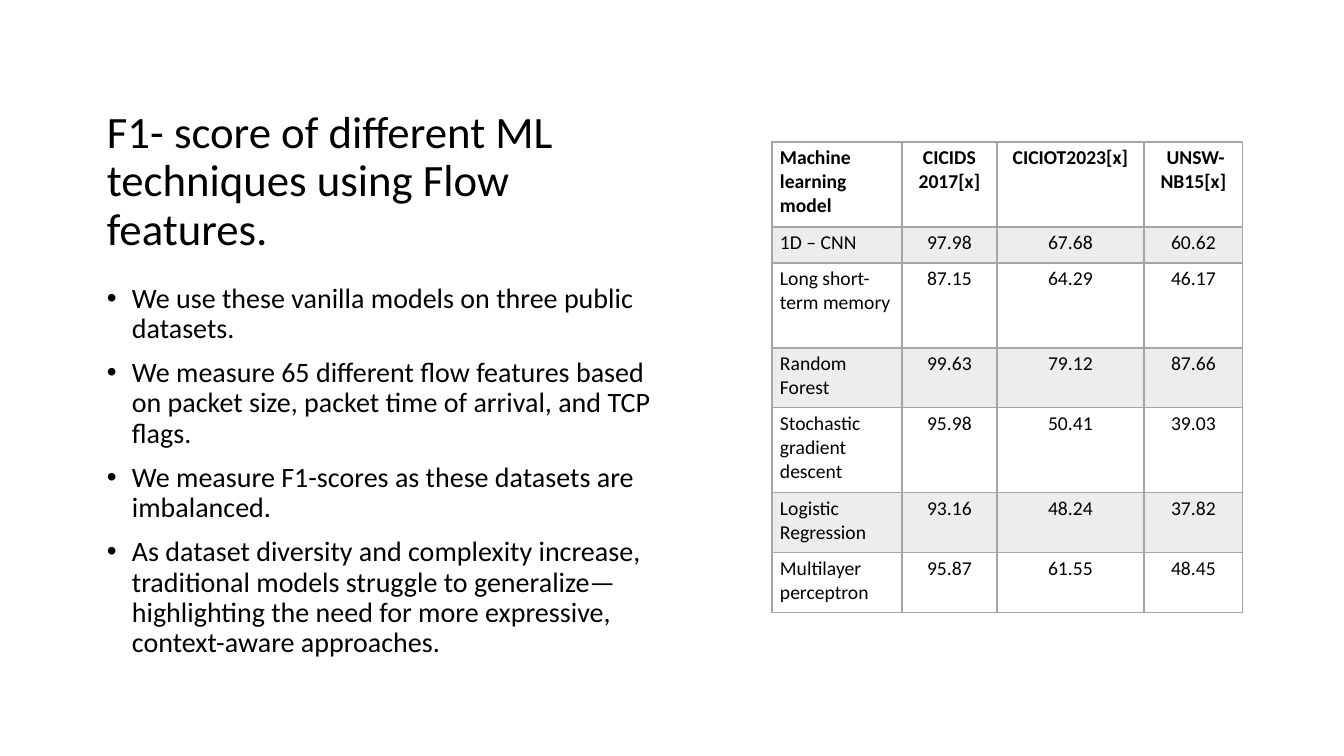
from dataclasses import dataclass

from lxml.etree import SubElement
from pptx import Presentation
from pptx.dml.color import RGBColor
from pptx.enum.text import MSO_ANCHOR as Anchor, PP_ALIGN as Align
from pptx.oxml.ns import qn
from pptx.slide import Slide
from pptx.table import _Cell as Cell
from pptx.text.text import _Paragraph as Paragraph
from pptx.util import Emu, Pt

PX_PER_INCH = 100.8
BLACK = RGBColor(0x00, 0x00, 0x00)
GREY = RGBColor(0xA5, 0xA5, 0xA5)
FONT = "Calibri"
BAND_OPACITY = 20
BULLET_INDENT = 25
TABLE_LEFT, TABLE_TOP = 772, 142
COLUMN_WIDTHS = (130, 95, 147, 99)


@dataclass(frozen=True)
class TextBlock:
    left: int
    top: int
    width: int
    height: int
    lines: tuple[str, ...]
    size: int
    anchor: Anchor
    bulleted: bool = False


@dataclass(frozen=True)
class ScoreRow:
    height: int
    cells: tuple[str, str, str, str]


TEXT_BLOCKS = (
    TextBlock(
        97, 82, 575, 178,
        ("F1- score of different ML techniques using Flow features.",),
        32, Anchor.BOTTOM,
    ),
    TextBlock(
        97, 279, 575, 390,
        (
            "We use these vanilla models on three public datasets.",
            "We measure 65 different flow features based on packet size, "
            "packet time of arrival, and TCP flags.",
            "We measure F1-scores as these datasets are imbalanced.",
            "As dataset diversity and complexity increase, traditional models "
            "struggle to generalize—highlighting the need for more expressive, "
            "context-aware approaches.",
        ),
        20, Anchor.TOP, bulleted=True,
    ),
)

SCORE_ROWS = (
    ScoreRow(85, ("Machine learning model", "CICIDS 2017[x]", "CICIOT2023[x]", " UNSW-NB15[x]")),
    ScoreRow(36, ("1D – CNN", "97.98", "67.68", "60.62")),
    ScoreRow(85, ("Long short-term memory", "87.15", "64.29", "46.17")),
    ScoreRow(60, ("Random Forest", "99.63", "79.12", "87.66")),
    ScoreRow(85, ("Stochastic gradient descent", "95.98", "50.41", "39.03")),
    ScoreRow(60, ("Logistic Regression", "93.16", "48.24", "37.82")),
    ScoreRow(60, ("Multilayer perceptron", "95.87", "61.55", "48.45")),
)


def px(length: int) -> Emu:
    return Emu(round(length * 914400 / PX_PER_INCH))


def style_font(para: Paragraph, size: int, bold: bool = False) -> None:
    para.font.name = FONT
    para.font.size = Pt(size)
    para.font.bold = bold
    para.font.color.rgb = BLACK


def add_bullet(para: Paragraph) -> None:
    properties = para._p.get_or_add_pPr()
    properties.set("marL", str(px(BULLET_INDENT)))
    properties.set("indent", str(-px(BULLET_INDENT)))
    para.space_before = Pt(10)
    SubElement(properties, qn("a:buFont"), typeface="Arial")
    SubElement(properties, qn("a:buChar"), char="•")


def add_text_block(page: Slide, block: TextBlock) -> None:
    box = page.shapes.add_textbox(
        px(block.left), px(block.top), px(block.width), px(block.height)
    )
    frame = box.text_frame
    frame.word_wrap = True
    frame.vertical_anchor = block.anchor
    frame.text = "\n".join(block.lines)
    for para in frame.paragraphs:
        para.line_spacing = 0.9
        if block.bulleted:
            add_bullet(para)
        style_font(para, block.size)


def add_border(cell: Cell, side: str, width: int) -> None:
    properties = cell._tc.get_or_add_tcPr()
    line = SubElement(properties, qn(f"a:ln{side}"), w=str(Pt(width)))
    fill = SubElement(line, qn("a:solidFill"))
    SubElement(fill, qn("a:srgbClr"), val=str(GREY))


def fill_cell(cell: Cell, banded: bool) -> None:
    if not banded:
        cell.fill.background()
        return
    cell.fill.solid()
    cell.fill.fore_color.rgb = GREY
    colour = cell._tc.tcPr.find(qn("a:solidFill")).find(qn("a:srgbClr"))
    SubElement(colour, qn("a:alpha"), val=str(BAND_OPACITY * 1000))


def write_cell(cell: Cell, text: str, row: int, column: int) -> None:
    cell.text = text
    cell.margin_left = cell.margin_right = px(8)
    cell.margin_top = cell.margin_bottom = px(4)
    para = cell.text_frame.paragraphs[0]
    para.alignment = Align.CENTER if column else Align.LEFT
    style_font(para, 14, bold=row == 0)
    for side in "LRTB":
        under_header = (row, side) in ((0, "B"), (1, "T"))
        add_border(cell, side, 2 if under_header else 1)
    fill_cell(cell, banded=row % 2 == 1)


def add_score_table(page: Slide) -> None:
    table = page.shapes.add_table(
        len(SCORE_ROWS), len(COLUMN_WIDTHS),
        px(TABLE_LEFT), px(TABLE_TOP),
        px(sum(COLUMN_WIDTHS)), px(sum(row.height for row in SCORE_ROWS)),
    ).table
    table.horz_banding = False
    for column, width in zip(table.columns, COLUMN_WIDTHS):
        column.width = px(width)
    for row_index, score_row in enumerate(SCORE_ROWS):
        table.rows[row_index].height = px(score_row.height)
        for column_index, text in enumerate(score_row.cells):
            cell = table.cell(row_index, column_index)
            write_cell(cell, text, row_index, column_index)


def main() -> None:
    deck = Presentation()
    deck.slide_width, deck.slide_height = px(1344), px(756)
    page = deck.slides.add_slide(deck.slide_layouts[6])
    for block in TEXT_BLOCKS:
        add_text_block(page, block)
    add_score_table(page)
    deck.save("out.pptx")


if __name__ == "__main__":
    main()
